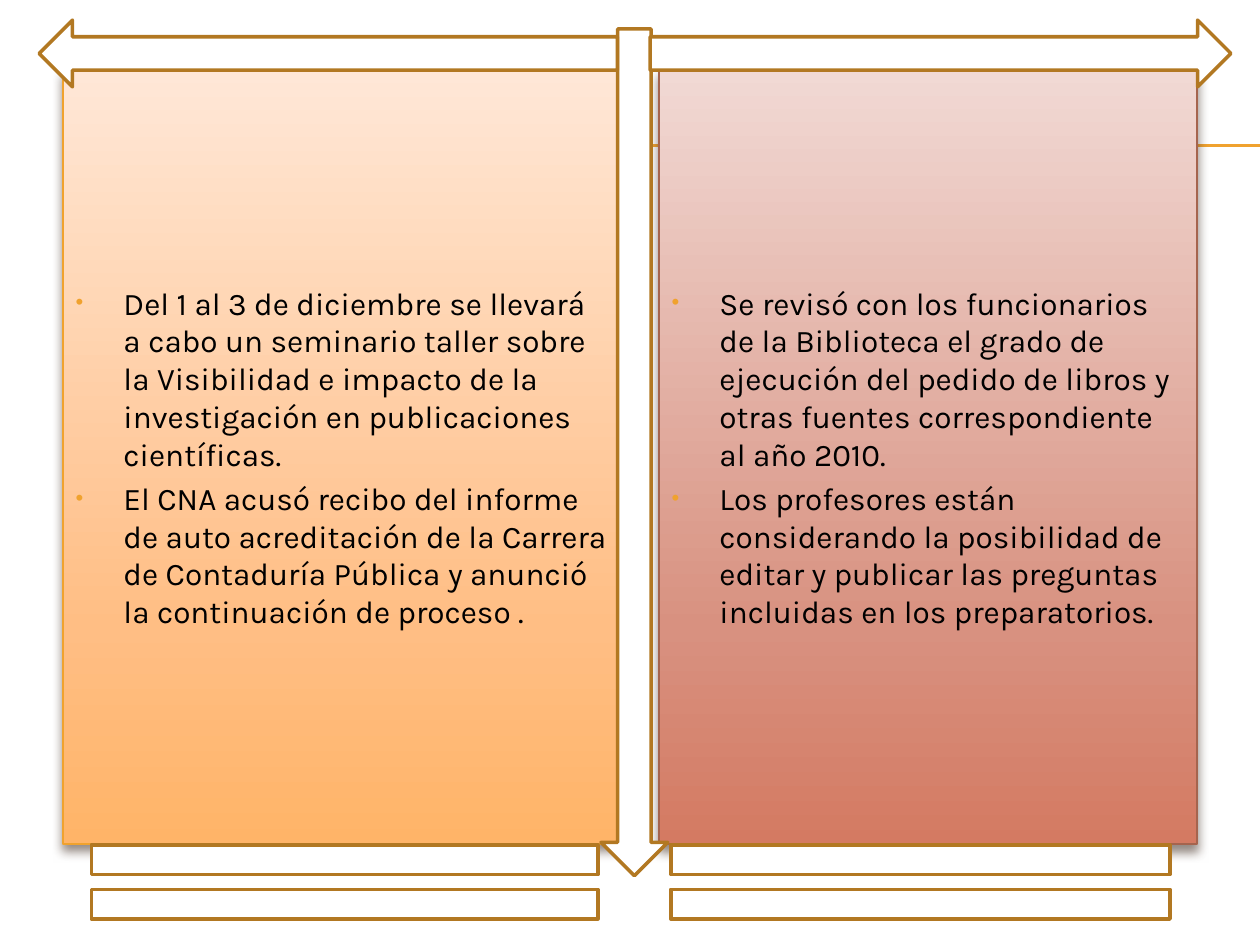
"""Build a slide with two gradient text panels framed by outlined arrows."""
from lxml.etree import SubElement
from pptx import Presentation
from pptx.dml.color import RGBColor
from pptx.enum.shapes import MSO_CONNECTOR, MSO_SHAPE
from pptx.enum.text import MSO_ANCHOR, MSO_AUTO_SIZE, PP_ALIGN
from pptx.oxml import parse_xml
from pptx.oxml.ns import nsdecls, qn
from pptx.util import Inches, Pt

AMBER = RGBColor(0xF0, 0xA2, 0x2E)
BROWN = RGBColor(0xB2, 0x78, 0x22)
RUST = RGBColor(0xA5, 0x64, 0x4E)
SHADOW = RGBColor(0x4E, 0x3B, 0x30)
WHITE = RGBColor(0xFF, 0xFF, 0xFF)
BLACK = RGBColor(0, 0, 0)
PEACH_STOPS = (RGBColor(0xFF, 0xE7, 0xD7), RGBColor(0xFF, 0xBE, 0x84), RGBColor(0xFF, 0xB4, 0x68))
ROSE_STOPS = (RGBColor(0xF1, 0xD9, 0xD4), RGBColor(0xD8, 0x91, 0x80), RGBColor(0xD4, 0x7A, 0x62))
STOP_PERCENTS = (0, 72, 100)

PANELS = [
    {
        "area": (0.5, 0.55, 4.42, 6.15), "stops": PEACH_STOPS, "edge": AMBER,
        "items": [
            "Del 1 al 3 de diciembre se llevará a cabo un seminario taller sobre la Visibilidad "
            "e impacto de la investigación en publicaciones científicas.",
            "El CNA acusó recibo del informe de auto acreditación de la Carrera de Contaduría "
            "Pública y anunció la continuación de proceso .",
        ],
    },
    {
        "area": (5.23, 0.55, 4.27, 6.15), "stops": ROSE_STOPS, "edge": RUST,
        "items": [
            "Se revisó con los funcionarios de la Biblioteca el grado de ejecución del pedido "
            "de libros y otras fuentes correspondiente al año 2010.",
            "Los profesores están considerando la posibilidad de editar y publicar las preguntas "
            "incluidas en los preparatorios.",
        ],
    },
]
RULE_HEIGHTS = (1.15, 1.16)
OUTLINES = [
    (MSO_SHAPE.DOWN_ARROW, (4.77, 0.23, 0.53, 6.72)),
    (MSO_SHAPE.RIGHT_ARROW, (5.16, 0.16, 4.61, 0.53)),
    (MSO_SHAPE.LEFT_ARROW, (0.31, 0.16, 4.59, 0.53)),
    (MSO_SHAPE.MATH_EQUAL, (0, 6.5, 5.47, 1)),
    (MSO_SHAPE.MATH_EQUAL, (4.61, 6.5, 5.39, 1)),
]


def add_rule(page, top):
    rule = page.shapes.add_connector(
        MSO_CONNECTOR.STRAIGHT, Inches(0.56), Inches(top), Inches(10), Inches(top))
    rule.line.color.rgb = AMBER
    rule.line.width = Pt(0.75)
    SubElement(rule._element.spPr, qn("a:effectLst"))
    page.shapes._spTree.remove(rule._element)
    page.shapes._spTree.insert(2, rule._element)


def write_item(para, text, size=18, font="Karla", color=BLACK, before=0):
    properties = para._p.get_or_add_pPr()
    properties.set("marL", str(Inches(0.38)))
    properties.set("indent", str(-Inches(0.38)))
    bullet_color = SubElement(properties, qn("a:buClr"))
    SubElement(bullet_color, qn("a:srgbClr"), val=str(AMBER))
    SubElement(properties, qn("a:buSzPct"), val="70000")
    SubElement(properties, qn("a:buFont"), typeface="Arial")
    SubElement(properties, qn("a:buChar"), char="•")
    para.alignment = PP_ALIGN.LEFT
    para.space_before = Pt(before)
    span = para.add_run()
    span.text = text
    span.font.size = Pt(size)
    span.font.name = font
    span.font.color.rgb = color


def style_panel(box, area, stops, edge, items):
    box.left, box.top, box.width, box.height = map(Inches, area)
    box.fill.gradient()
    box.fill.gradient_angle = 270
    stop_list = box._element.spPr.find(qn("a:gradFill")).find(qn("a:gsLst"))
    for stop in list(stop_list):
        stop_list.remove(stop)
    for percent, color in zip(STOP_PERCENTS, stops):
        stop = SubElement(stop_list, qn("a:gs"), pos=str(percent * 1000))
        SubElement(stop, qn("a:srgbClr"), val=str(color))
    box.line.color.rgb = edge
    box.line.width = Pt(0.79)
    box._element.spPr.append(parse_xml(
        f'<a:effectLst {nsdecls("a")}><a:outerShdw blurRad="{Pt(6)}" dist="{Pt(4)}" '
        f'dir="5400000" rotWithShape="0"><a:srgbClr val="{SHADOW}">'
        '<a:alpha val="60000"/></a:srgbClr></a:outerShdw></a:effectLst>'))
    frame = box.text_frame
    frame.word_wrap = True
    frame.auto_size = MSO_AUTO_SIZE.NONE
    frame.vertical_anchor = MSO_ANCHOR.MIDDLE
    for index, text in enumerate(items):
        para = frame.add_paragraph() if index else frame.paragraphs[0]
        write_item(para, text, before=3.6 if index else 0)


def add_outline(page, kind, area):
    shape = page.shapes.add_shape(kind, *map(Inches, area))
    shape.shadow.inherit = False
    shape.fill.solid()
    shape.fill.fore_color.rgb = WHITE
    shape.line.color.rgb = BROWN
    shape.line.width = Pt(2)


def main():
    deck = Presentation()
    deck.slide_width, deck.slide_height = Inches(10), Inches(7.5)
    page = deck.slides.add_slide(deck.slide_layouts[3])
    title = page.shapes.title
    title._element.getparent().remove(title._element)
    for top in reversed(RULE_HEIGHTS):
        add_rule(page, top)
    for box, panel in zip(page.placeholders, PANELS):
        style_panel(box, **panel)
    for kind, area in OUTLINES:
        add_outline(page, kind, area)
    deck.save("out.pptx")


if __name__ == "__main__":
    main()
